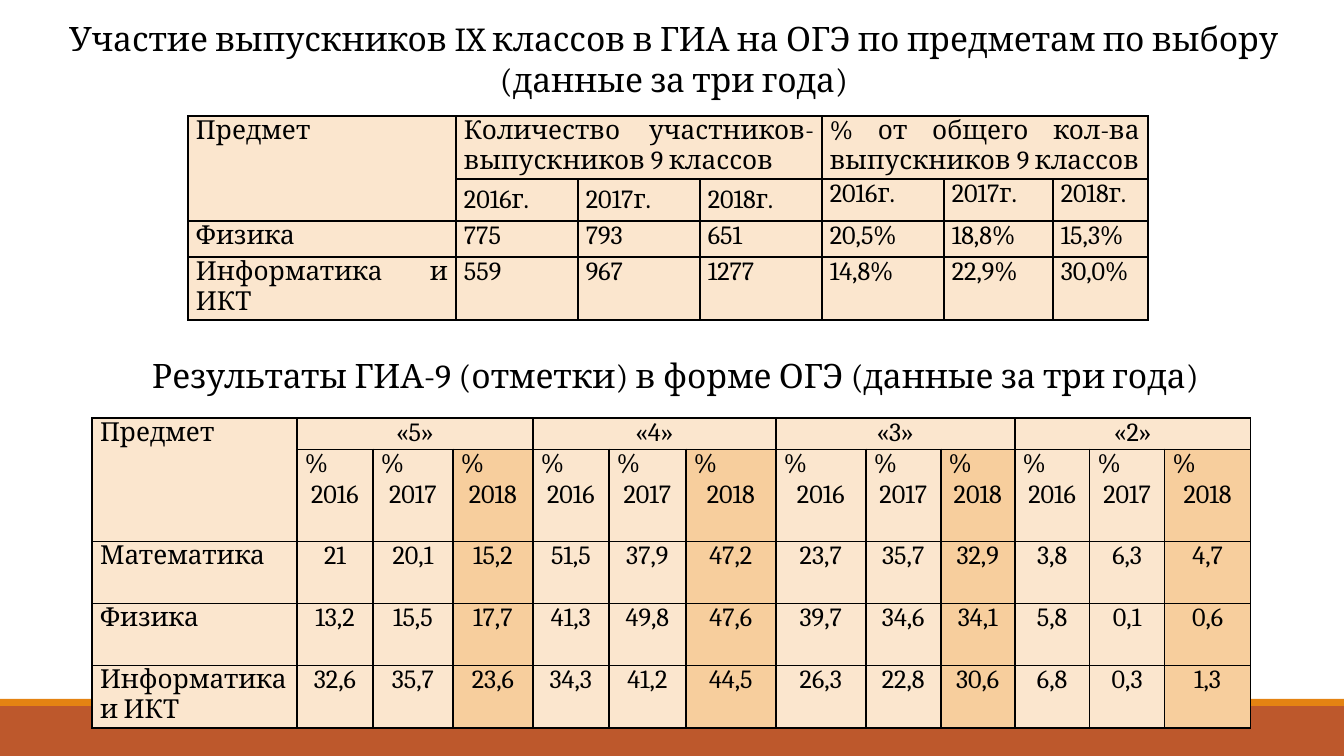
from lxml import etree
from pptx import Presentation
from pptx import util as u
from pptx.dml.color import RGBColor
from pptx.enum import shapes, text
from pptx.oxml import ns

PX = 9144000 / 1344
ALIGN = text.PP_ALIGN


def px(value):
    """Turn px into EMU."""
    return u.Emu(round(value * PX))


def paint(target, colour):
    """Give a fill or a font a solid hex colour."""
    if hasattr(target, "solid"):
        target.solid()
        target.fore_color.rgb = RGBColor.from_string(colour)
    else:
        target.color.rgb = RGBColor.from_string(colour)


class SlideBuilder:
    """Holds the style and the current slide."""

    font = "Cambria"
    ink = "000000"
    cream = "FBE6CE"
    peach = "F7CE9D"

    def __init__(self, slide):
        self.slide = slide

    def format_text(self, paragraph, size, align):
        """Apply alignment and font to a paragraph's runs."""
        paragraph.alignment = align
        for run in paragraph.runs:
            run.font.name = self.font
            run.font.size = u.Pt(size)
            paint(run.font, self.ink)

    def bar(self, x, y, width, height, colour):
        """Add a plain filled rectangle."""
        shape = self.slide.shapes.add_shape(
            shapes.MSO_SHAPE.RECTANGLE, px(x), px(y), px(width), px(height))
        shape.shadow.inherit = False
        paint(shape.fill, colour)
        shape.line.fill.background()

    def heading(self, shape, box, words, align, indent=0):
        """Place and format a heading in a placeholder or text box."""
        shape.left, shape.top, shape.width, shape.height = map(px, box)
        frame = shape.text_frame
        frame.text = words
        frame.word_wrap = True
        frame.auto_size = text.MSO_AUTO_SIZE.SHAPE_TO_FIT_TEXT
        frame.vertical_anchor = text.MSO_ANCHOR.MIDDLE
        frame.margin_left = frame.margin_right = px(9)
        frame.margin_top = frame.margin_bottom = px(5)
        for paragraph in frame.paragraphs:
            self.format_text(paragraph, 18, align)
            if indent:
                paragraph._p.get_or_add_pPr().set("indent", str(px(indent)))

    def title(self, box, words):
        """Fill the slide's title placeholder."""
        self.heading(self.slide.shapes.title, box, words, ALIGN.CENTER)

    def subtitle(self, box, words, indent):
        """Add a heading in a text box."""
        shape = self.slide.shapes.add_textbox(*map(px, box))
        self.heading(shape, box, words, ALIGN.LEFT, indent)

    def borders(self, cell):
        """Draw a thin line on all four sides of a cell."""
        properties = cell._tc.get_or_add_tcPr()
        for side in ("a:lnL", "a:lnR", "a:lnT", "a:lnB"):
            line = etree.SubElement(properties, ns.qn(side), w=str(u.Pt(1)))
            fill = etree.SubElement(line, ns.qn("a:solidFill"))
            etree.SubElement(fill, ns.qn("a:srgbClr"), val=self.ink)

    def table(self, x, y, widths, heights, rows, align, highlights=()):
        """Add a table with a two-row header grouped by three columns."""
        frame = self.slide.shapes.add_table(
            len(heights), len(widths), px(x), px(y), px(sum(widths)), px(sum(heights)))
        table = frame.table
        table.first_row = table.horz_banding = False
        for column, width in zip(table.columns, widths):
            column.width = px(width)
        for row, height in zip(table.rows, heights):
            row.height = px(height)
        for r, row in enumerate(rows):
            for c, words in enumerate(row):
                cell = table.cell(r, c)
                cell.margin_left = cell.margin_right = px(8)
                cell.margin_top = cell.margin_bottom = 0
                self.borders(cell)
                paint(cell.fill, self.peach if r and c in highlights else self.cream)
                cell.text_frame.text = words
                for paragraph in cell.text_frame.paragraphs:
                    justified = c == 0 or paragraph.text == "%"
                    self.format_text(paragraph, 14, ALIGN.JUSTIFY if justified else align)
        table.cell(0, 0).merge(table.cell(1, 0))
        for c in range(1, len(widths), 3):
            table.cell(0, c).merge(table.cell(0, c + 2))
        return table


def grouped(labels):
    """Return a header row with each label followed by two merged cells."""
    return ["Предмет"] + [words for label in labels for words in (label, "", "")]


def main():
    """Build and save the presentation."""
    presentation = Presentation()
    presentation.slide_width, presentation.slide_height = px(1344), px(756)
    slide = presentation.slides.add_slide(presentation.slide_layouts[5])
    builder = SlideBuilder(slide)
    years = ["2016", "2017", "2018"]

    builder.bar(0, 706, 1344, 50, "BD582C")
    builder.bar(0, 699, 1344, 7, "E48312")
    builder.title(
        (35, 13, 1278, 91),
        "Участие выпускников IX классов в ГИА на ОГЭ по предметам по выбору\n"
        "(данные за три года)")

    participation = builder.table(
        188, 116, [268, 122, 122, 122, 122, 109, 95], [63, 42, 36, 63],
        [
            grouped(["Количество участников-выпускников 9 классов",
                     "% от общего кол-ва выпускников 9 классов"]),
            [""] + [f"{year}г." for year in years] * 2,
            ["Физика", "775", "793", "651", "20,5%", "18,8%", "15,3%"],
            ["Информатика и ИКТ", "559", "967", "1277", "14,8%", "22,9%", "30,0%"],
        ],
        ALIGN.JUSTIFY)
    for c in range(1, 4):
        participation.cell(1, c).vertical_anchor = text.MSO_ANCHOR.MIDDLE

    builder.subtitle(
        (93, 350, 1120, 51),
        "Результаты ГИА-9 (отметки) в форме ОГЭ (данные за три года)", 50)
    builder.table(
        92, 418, [205, 76, 80, 80, 76, 77, 90, 90, 75, 74, 75, 75, 86],
        [31, 92, 62, 62, 62],
        [
            grouped(["«5»", "«4»", "«3»", "«2»"]),
            [""] + [f"%\n{year}" for year in years] * 4,
            ["Математика", "21", "20,1", "15,2", "51,5", "37,9", "47,2",
             "23,7", "35,7", "32,9", "3,8", "6,3", "4,7"],
            ["Физика", "13,2", "15,5", "17,7", "41,3", "49,8", "47,6",
             "39,7", "34,6", "34,1", "5,8", "0,1", "0,6"],
            ["Информатика и ИКТ", "32,6", "35,7", "23,6", "34,3", "41,2", "44,5",
             "26,3", "22,8", "30,6", "6,8", "0,3", "1,3"],
        ],
        ALIGN.CENTER, highlights=range(3, 13, 3))
    presentation.save("out.pptx")


if __name__ == "__main__":
    main()
